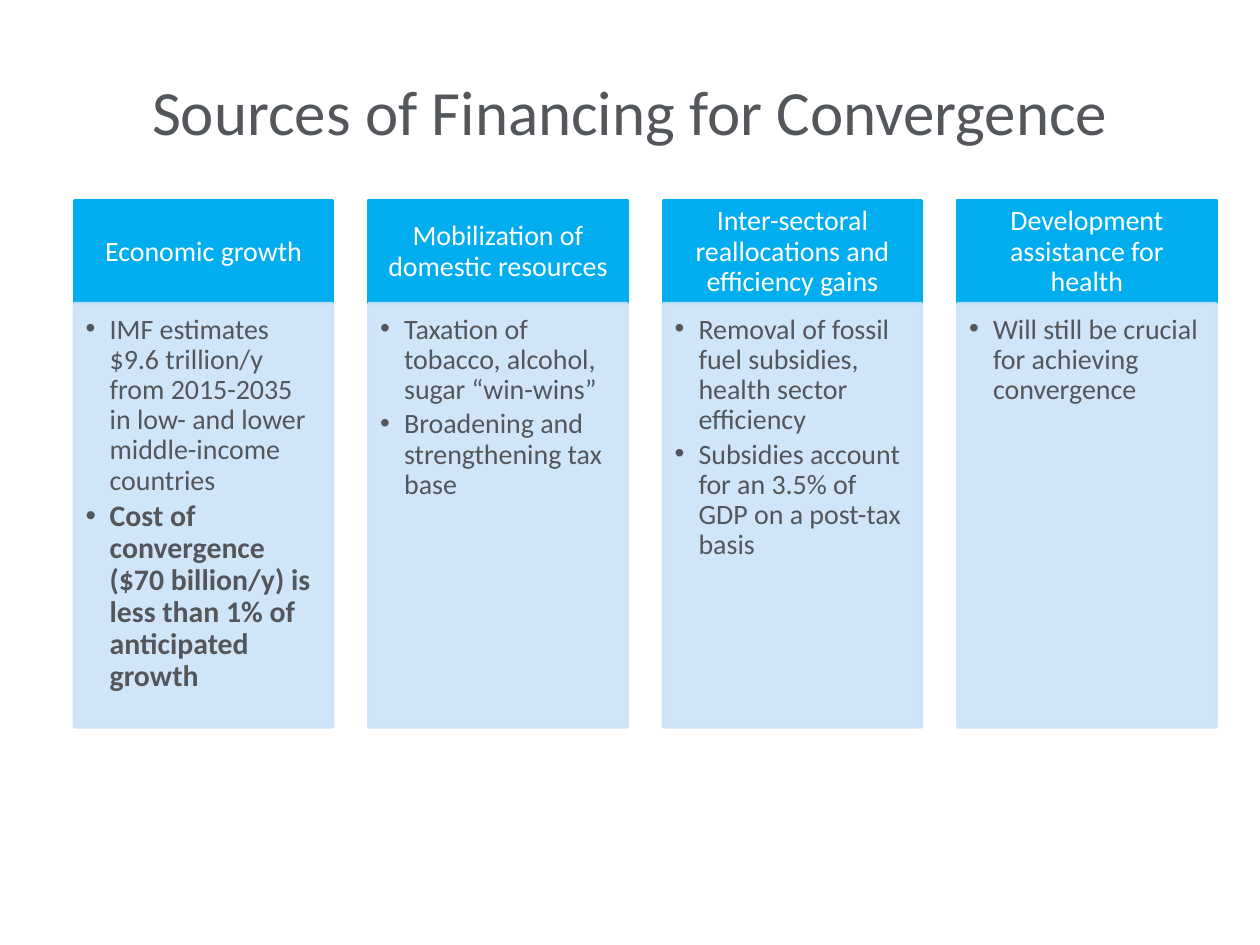
from dataclasses import dataclass

from lxml import etree
from pptx import Presentation
from pptx import util as u
from pptx.dml.color import RGBColor
from pptx.enum import shapes, text
from pptx.oxml.ns import qn


@dataclass(frozen=True)
class Theme:
    font: str = "Calibri"
    ink: str = "53565A"
    white: str = "FFFFFF"
    header: str = "00AEEF"
    panel: str = "CCE3F9"
    panel_opacity: int = 90
    title_size: int = 36
    body_size: int = 16
    emphasis_size: int = 17


THEME = Theme()

# Column grid, in inches
LEFT, TOP, PITCH, WIDTH = 0.59, 1.59, 2.337, 2.05
HEADER_HEIGHT, PANEL_HEIGHT = 0.82, 3.36
BULLET_INDENT = 0.19

# Each column: heading, then (bullet, emphasised)
COLUMNS = [
    ("Economic growth", [
        ("IMF estimates $9.6 trillion/y from 2015-2035 in low- and lower "
         "middle-income countries", False),
        ("Cost of convergence ($70 billion/y) is less than 1% of "
         "anticipated growth", True)]),
    ("Mobilization of domestic resources", [
        ("Taxation of tobacco, alcohol, sugar “win-wins”", False),
        ("Broadening and strengthening tax base", False)]),
    ("Inter-sectoral reallocations and efficiency gains", [
        ("Removal of fossil fuel subsidies, health sector efficiency", False),
        ("Subsidies account for an 3.5% of GDP on a post-tax basis", False)]),
    ("Development assistance for health", [
        ("Will still be crucial for achieving convergence", False)]),
]


def apply(target, values):
    for name, value in values.items():
        setattr(target, name, value)


def set_frame(frame, anchor, insets):
    sides = ("margin_left", "margin_top", "margin_right", "margin_bottom")
    apply(frame, {"word_wrap": True, "vertical_anchor": anchor})
    apply(frame, {side: u.Inches(inset) for side, inset in zip(sides, insets)})


def write(paragraph, words, size, color, bold=False, **layout):
    paragraph.text = words
    apply(paragraph, layout)
    apply(paragraph.font, {"name": THEME.font, "size": u.Pt(size), "bold": bold})
    paragraph.font.color.rgb = RGBColor.from_string(color)


def add_bullet(paragraph):
    properties = paragraph._p.get_or_add_pPr()
    indent = u.Inches(BULLET_INDENT)
    properties.set("marL", str(indent))
    properties.set("indent", str(-indent))
    etree.SubElement(properties, qn("a:buFont"), typeface="Arial")
    etree.SubElement(properties, qn("a:buChar"), char="•")


def add_box(slide, left, top, height, color, opacity=100):
    shape = slide.shapes.add_shape(
        shapes.MSO_SHAPE.RECTANGLE, u.Inches(left), u.Inches(top),
        u.Inches(WIDTH), u.Inches(height))
    shape.shadow.inherit = False
    shape.line.width = u.Pt(2)
    shape.fill.solid()
    for paint in (shape.fill.fore_color, shape.line.color):
        paint.rgb = RGBColor.from_string(color)
    if opacity < 100:
        for node in shape._element.spPr.iter(qn("a:srgbClr")):
            etree.SubElement(node, qn("a:alpha"), val=str(opacity * 1000))
    return shape


def add_title(slide, words):
    box = slide.shapes.add_textbox(
        u.Inches(0.5), u.Inches(0.25), u.Inches(9), u.Inches(1.25))
    set_frame(box.text_frame, text.MSO_ANCHOR.MIDDLE, (0.1, 0.05, 0.1, 0.05))
    write(box.text_frame.paragraphs[0], words, THEME.title_size, THEME.ink,
          alignment=text.PP_ALIGN.CENTER)


def add_header(slide, left, words):
    shape = add_box(slide, left, TOP, HEADER_HEIGHT, THEME.header)
    set_frame(shape.text_frame, text.MSO_ANCHOR.MIDDLE, (0.12, 0.07, 0.12, 0.07))
    write(shape.text_frame.paragraphs[0], words, THEME.body_size, THEME.white,
          alignment=text.PP_ALIGN.CENTER, line_spacing=0.9)


def add_panel(slide, left, bullets):
    shape = add_box(slide, left, TOP + HEADER_HEIGHT, PANEL_HEIGHT,
                    THEME.panel, THEME.panel_opacity)
    frame = shape.text_frame
    set_frame(frame, text.MSO_ANCHOR.TOP, (0.09, 0.09, 0.12, 0.14))
    for index, (words, emphasised) in enumerate(bullets):
        paragraph = frame.add_paragraph() if index else frame.paragraphs[0]
        add_bullet(paragraph)
        size = THEME.emphasis_size if emphasised else THEME.body_size
        write(paragraph, words, size, THEME.ink, emphasised,
              alignment=text.PP_ALIGN.LEFT, line_spacing=0.9,
              space_after=u.Pt(0.15 * size))


def main():
    presentation = Presentation()
    apply(presentation, {"slide_width": u.Inches(10),
                         "slide_height": u.Inches(7.5)})
    slide = presentation.slides.add_slide(presentation.slide_layouts[6])

    # Title
    add_title(slide, "Sources of Financing for Convergence")

    # Four columns of a header above a bulleted panel
    for index, (heading, bullets) in enumerate(COLUMNS):
        left = LEFT + index * PITCH
        add_header(slide, left, heading)
        add_panel(slide, left, bullets)

    presentation.save("out.pptx")


if __name__ == "__main__":
    main()
